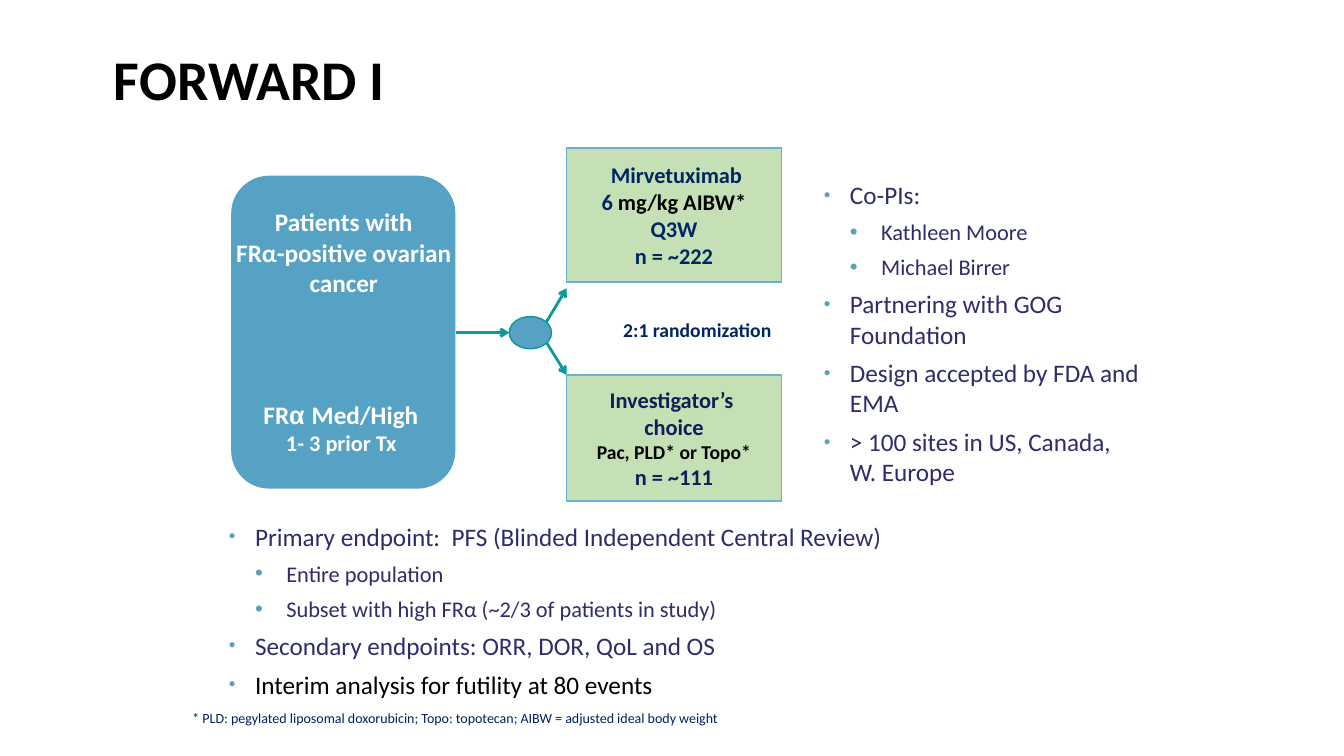
from lxml.etree import SubElement
from pptx import Presentation
from pptx.dml.color import RGBColor
from pptx.enum.shapes import MSO_CONNECTOR, MSO_SHAPE
from pptx.enum.text import MSO_ANCHOR, MSO_AUTO_SIZE, PP_ALIGN
from pptx.oxml.ns import qn
from pptx.util import Pt

PX = 9144  # 100 px to the inch
TEAL, BLUE, GREEN, SKY = "0B999A", "55A2C5", "C5E0B4", "65B2D1"
NAVY, INDIGO, PURPLE, FOOTNOTE = "002664", "141C5A", "2D2D6B", "002060"
BULLET, BLACK, WHITE = "5BA1BD", "000000", "FFFFFF"
# left margin, indent, text size, bullet size in percent
LEVELS = [(26, -26, 18, 75), (57, -31, 16, 100)]


def color(value):
    return RGBColor.from_string(value)


def emu(*lengths):
    return [length * PX for length in lengths]


def place(shape, bounds):
    for name, length in zip(("left", "top", "width", "height"), emu(*bounds)):
        setattr(shape, name, length)


def add_span(para, text, size, ink, bold=False, font="Calibri"):
    """Add formatted text; a newline in it becomes a line break of that size."""
    for index, part in enumerate(text.split("\n")):
        if index:
            line_break = SubElement(para._p, qn("a:br"))
            SubElement(line_break, qn("a:rPr"), sz=str(size * 100))
        span = para.add_run()
        span.text = part
        formats = {"size": Pt(size), "bold": bold, "name": font}
        for name, value in formats.items():
            setattr(span.font, name, value)
        span.font.color.rgb = color(ink)


def write(frame, lines, align=PP_ALIGN.LEFT, anchor=MSO_ANCHOR.TOP, wrap=True):
    """Fill a frame; each line is a list of add_span argument tuples."""
    formats = {"auto_size": MSO_AUTO_SIZE.NONE, "vertical_anchor": anchor,
               "word_wrap": wrap}
    for name, value in formats.items():
        setattr(frame, name, value)
    for index, spans in enumerate(lines):
        para = frame.add_paragraph() if index else frame.paragraphs[0]
        para.alignment = align
        for span in spans:
            add_span(para, *span)


def add_label(page, bounds, lines, **layout):
    box = page.shapes.add_textbox(*emu(*bounds))
    write(box.text_frame, lines, **layout)


def add_block(page, kind, bounds, fill, line):
    block = page.shapes.add_shape(kind, *emu(*bounds))
    block.shadow.inherit = False
    block.fill.solid()
    block.fill.fore_color.rgb = color(fill)
    block.line.color.rgb = color(line)
    block.line.width = Pt(1)
    return block


def add_arm(page, bounds, lines):
    """Add a green treatment box."""
    arm = add_block(page, MSO_SHAPE.RECTANGLE, bounds, GREEN, SKY)
    write(arm.text_frame, lines, PP_ALIGN.CENTER, MSO_ANCHOR.MIDDLE, False)


def add_arrow(page, *ends):
    arrow = page.shapes.add_connector(MSO_CONNECTOR.STRAIGHT, *emu(*ends))
    arrow.line.color.rgb = color(TEAL)
    arrow.line.width = Pt(2)
    SubElement(arrow.line._get_or_add_ln(), qn("a:tailEnd"), type="arrow")
    SubElement(arrow._element.spPr, qn("a:effectLst"))


def add_bullet(para, level):
    margin, indent, _, percent = LEVELS[level]
    para.level = level
    properties = para._p.get_or_add_pPr()
    properties.set("marL", str(margin * PX))
    properties.set("indent", str(indent * PX))
    tint = SubElement(properties, qn("a:buClr"))
    SubElement(tint, qn("a:srgbClr"), val=BULLET)
    SubElement(properties, qn("a:buSzPct"), val=str(percent * 1000))
    SubElement(properties, qn("a:buFont"), typeface="Arial")
    SubElement(properties, qn("a:buChar"), char="•")


def fill_list(body, bounds, items):
    """Write (level, text, colour) items as bullets in a body placeholder."""
    place(body, bounds)
    write(body.text_frame, [[(text, LEVELS[level][2], ink)]
                            for level, text, ink in items])
    for index, para in enumerate(body.text_frame.paragraphs):
        add_bullet(para, items[index][0])
        para.space_before = Pt(6 if index else 0)


def add_patients(page):
    add_block(page, MSO_SHAPE.ROUNDED_RECTANGLE, (230, 175, 221, 309), BLUE, BLUE)
    add_label(page, (223, 200, 236, 101), [
        [("Patients with", 18, WHITE, True)],
        [("FRα-positive ovarian cancer", 18, WHITE, True)],
    ], align=PP_ALIGN.CENTER)
    add_label(page, (218, 391, 246, 67), [
        [("FR", 18, WHITE, True), ("α ", 18, WHITE, True, "Arial"),
         ("Med/High ", 18, WHITE, True)],
        [("1- 3 prior Tx ", 16, WHITE, True)],
    ], align=PP_ALIGN.CENTER)


def add_randomization(page):
    add_arrow(page, 526, 346, 562, 286)
    add_arrow(page, 526, 314, 562, 372)
    add_block(page, MSO_SHAPE.OVAL, (505, 314, 42, 32), BLUE, TEAL)
    add_arrow(page, 452, 330, 505, 330)
    add_label(page, (606, 311, 169, 34),
              [[("2:1 randomization", 14, NAVY, True)]],
              align=PP_ALIGN.RIGHT, wrap=False)


def main():
    deck = Presentation()
    deck.slide_width, deck.slide_height = emu(1333, 750)
    page = deck.slides.add_slide(deck.slide_layouts[3])
    title, endpoints, conduct = page.placeholders

    place(title, (103, 39, 331, 77))
    write(title.text_frame, [[("FORWARD I", 40, BLACK, True)]])

    add_patients(page)
    add_randomization(page)
    add_arm(page, (562, 147, 213, 133), [
        [(" Mirvetuximab", 16, NAVY, True)],
        [("6 ", 16, NAVY, True), ("mg/kg AIBW*", 16, BLACK, True)],
        [("Q3W", 16, NAVY, True)],
        [("n = ~222", 16, NAVY, True)],
    ])
    add_arm(page, (562, 372, 213, 125), [
        [("Investigator’s \nchoice", 16, INDIGO, True)],
        [("Pac, PLD* or Topo*", 14, BLACK, True)],
        [("n = ~111", 16, INDIGO, True)],
    ])

    fill_list(endpoints, (217, 512, 903, 188), [
        (0, "Primary endpoint:  PFS (Blinded Independent Central Review)", PURPLE),
        (1, "Entire population", PURPLE),
        (1, "Subset with high FRα (~2/3 of patients in study)", PURPLE),
        (0, "Secondary endpoints: ORR, DOR, QoL and OS", PURPLE),
        (0, "Interim analysis for futility at 80 events", BLACK),
    ])
    fill_list(conduct, (807, 173, 335, 318), [
        (0, "Co-PIs:", PURPLE),
        (1, "Kathleen Moore", PURPLE),
        (1, "Michael Birrer", PURPLE),
        (0, "Partnering with GOG Foundation", PURPLE),
        (0, "Design accepted by FDA and EMA", PURPLE),
        (0, "> 100 sites in US, Canada, W. Europe", PURPLE),
    ])
    add_label(page, (181, 699, 975, 27), [
        [("* PLD: pegylated liposomal doxorubicin; Topo: topotecan; "
          "AIBW = adjusted ideal body weight", 10, FOOTNOTE)],
    ])
    deck.save("out.pptx")


if __name__ == "__main__":
    main()
